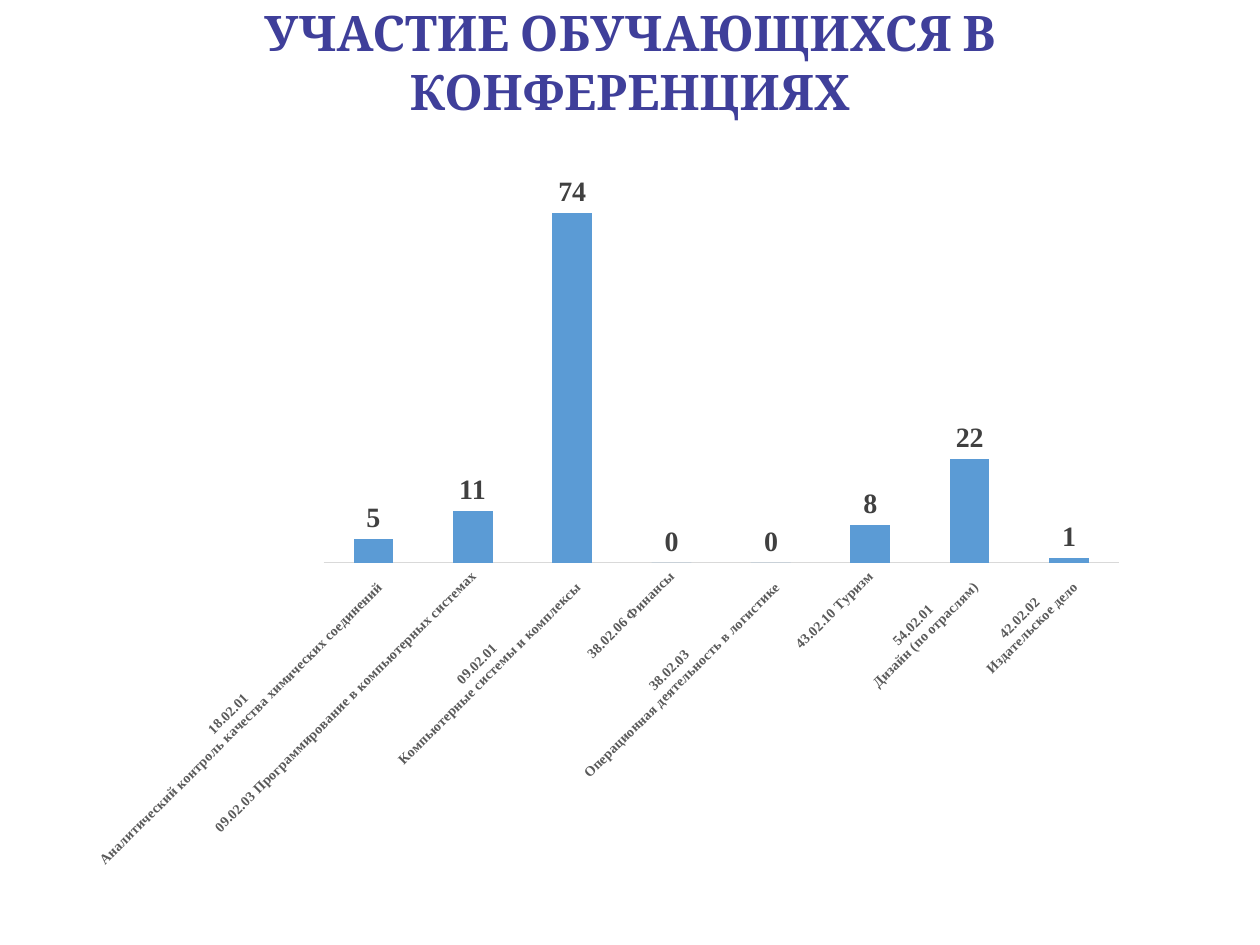
from pptx import Presentation
from pptx import util as u
from pptx.chart.data import CategoryChartData
from pptx.dml.color import RGBColor
from pptx.enum import chart as charts, text

TITLE_COLOR = RGBColor(0x3F, 0x3F, 0x9A)
BAR_COLOR = RGBColor(0x5B, 0x9B, 0xD5)
VALUE_COLOR = RGBColor(0x40, 0x40, 0x40)
CATEGORY_COLOR = RGBColor(0x59, 0x59, 0x59)
AXIS_COLOR = RGBColor(0xD9, 0xD9, 0xD9)
BLACK = RGBColor(0, 0, 0)

PARTICIPANTS = {
    "18.02.01 \nАналитический контроль качества химических соединений": 5,
    "09.02.03 Программирование в компьютерных системах": 11,
    "09.02.01 \nКомпьютерные системы и комплексы": 74,
    "38.02.06 Финансы": 0,
    "38.02.03 \nОперационная деятельность в логистике": 0,
    "43.02.10 Туризм": 8,
    "54.02.01 \nДизайн (по отраслям)": 22,
    "42.02.02 \nИздательское дело": 1,
}


def format_font(font, name="Times New Roman", size=16, color=BLACK, bold=True):
    font.name = name
    font.size = u.Pt(size)
    font.bold = bold
    font.color.rgb = color


def write_text(paragraph, content, alignment=text.PP_ALIGN.CENTER, **font_format):
    paragraph.alignment = alignment
    run = paragraph.add_run()
    run.text = content
    format_font(run.font, **font_format)


class SlideBuilder:
    def __init__(self, slide):
        self.slide = slide

    def title(self, content, left, top, width, height):
        shape = self.slide.shapes.title
        shape.left, shape.top = u.Inches(left), u.Inches(top)
        shape.width, shape.height = u.Inches(width), u.Inches(height)
        frame = shape.text_frame
        frame.word_wrap = True
        frame.auto_size = text.MSO_AUTO_SIZE.NONE
        frame.vertical_anchor = text.MSO_ANCHOR.MIDDLE
        write_text(frame.paragraphs[0], content,
                   name="Cambria", size=28, color=TITLE_COLOR)

    def column_chart(self, values, left, top, width, height):
        data = CategoryChartData()
        data.categories = list(values)
        data.add_series("Series 1", list(values.values()))
        chart = self.slide.shapes.add_chart(
            charts.XL_CHART_TYPE.COLUMN_CLUSTERED,
            u.Inches(left), u.Inches(top), u.Inches(width), u.Inches(height),
            data).chart
        chart.has_title = False
        chart.has_legend = False
        format_font(chart.font)
        self.style_columns(chart.plots[0])
        self.style_axes(chart)

    def style_columns(self, plot):
        plot.gap_width = 150
        plot.overlap = -25
        plot.vary_by_categories = False
        fill = plot.series[0].format.fill
        fill.solid()
        fill.fore_color.rgb = BAR_COLOR
        plot.has_data_labels = True
        labels = plot.data_labels
        labels.show_value = True
        labels.position = charts.XL_LABEL_POSITION.OUTSIDE_END
        format_font(labels.font, color=VALUE_COLOR)

    def style_axes(self, chart):
        chart.value_axis.visible = False
        chart.value_axis.has_major_gridlines = False
        chart.value_axis.minimum_scale = 0
        axis = chart.category_axis
        axis.major_tick_mark = charts.XL_TICK_MARK.NONE
        axis.minor_tick_mark = charts.XL_TICK_MARK.NONE
        axis.format.line.color.rgb = AXIS_COLOR
        axis.format.line.width = u.Pt(0.75)
        format_font(axis.tick_labels.font, size=8, color=CATEGORY_COLOR)
        axis._element.txPr.bodyPr.set("rot", "-2700000")


def main():
    presentation = Presentation()
    presentation.slide_width = u.Inches(10)
    presentation.slide_height = u.Inches(7.5)
    builder = SlideBuilder(
        presentation.slides.add_slide(presentation.slide_layouts[5]))
    builder.title("УЧАСТИЕ ОБУЧАЮЩИХСЯ В КОНФЕРЕНЦИЯХ", 0.5, -0.14, 9, 1.25)
    builder.column_chart(PARTICIPANTS, 0.5, 1.35, 8.55, 5.65)
    presentation.save("out.pptx")


if __name__ == "__main__":
    main()
